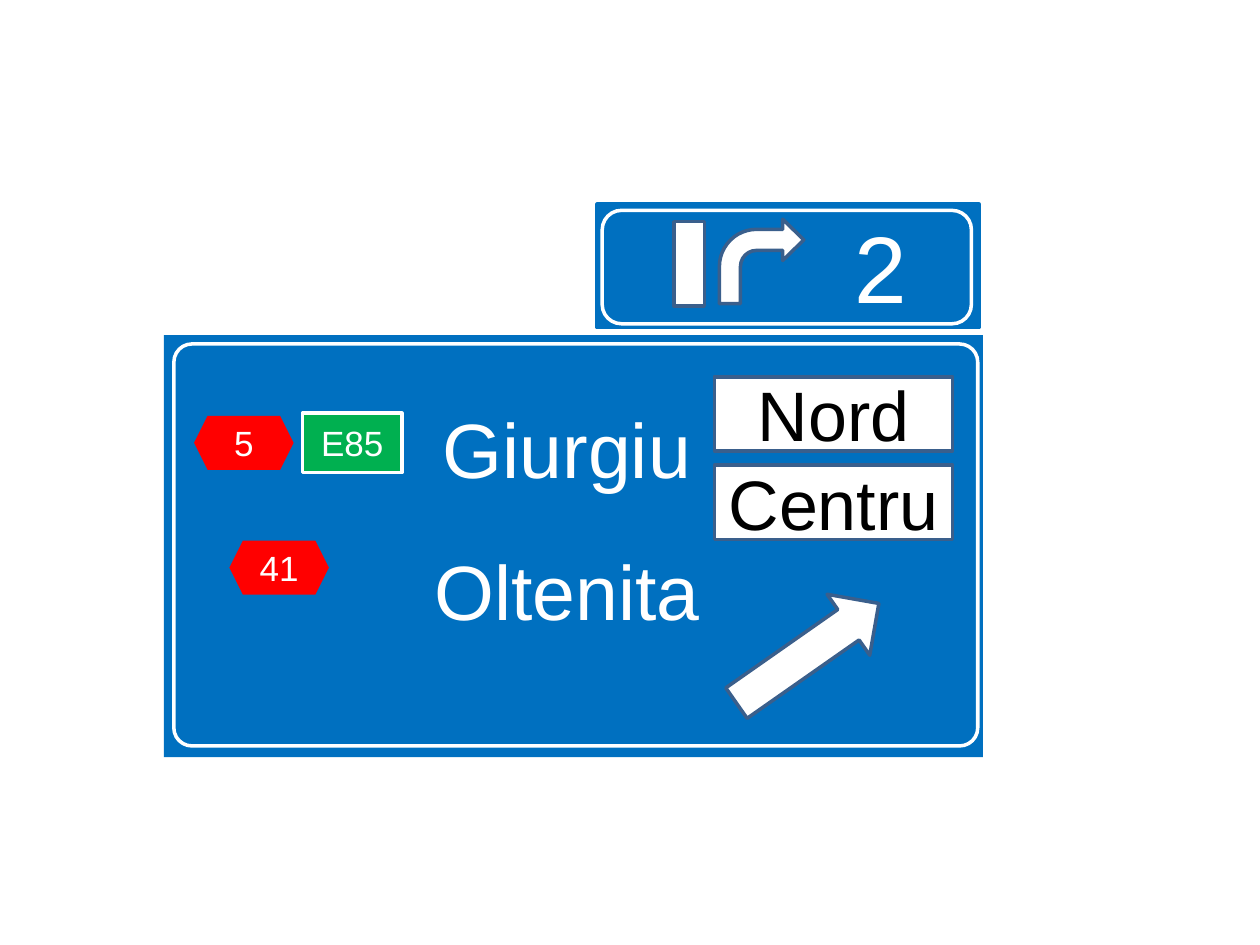
from pptx import Presentation
from pptx.dml.color import RGBColor
from pptx.enum.shapes import MSO_SHAPE
from pptx.enum.text import MSO_ANCHOR, MSO_AUTO_SIZE, PP_ALIGN
from pptx.util import Inches, Pt

THEME = {
    "font": "Arial",
    "blue": "0070C0", "white": "FFFFFF", "black": "000000",
    "red": "FF0000", "green": "00B050", "outline": "3A5F8C",
    "town": 44, "district": 40, "road": 20, "exit": 54,
    "line": 2,
}

TOWNS = ["Giurgiu", "Oltenita"]
MAIN_PANEL = (1.3, 2.66, 6.5, 3.35)
EXIT_PANEL = (4.74, 1.62, 3.03, 0.98)
EXIT_NUMBER = "2"

# label, left, top
DISTRICTS = [("Nord", 5.67, 2.99), ("Centru", 5.67, 3.69)]
DISTRICT_SIZE = (1.89, 0.59)
NATIONAL_ROADS = [("5", 1.54, 3.3), ("41", 1.82, 4.29)]
NATIONAL_ROAD_SIZE = (0.79, 0.43)
EUROPEAN_ROAD = ("E85", (2.4, 3.28, 0.79, 0.47))

# kind, box, adjustments, rotation
ARROWS = [
    (MSO_SHAPE.RIGHT_ARROW, (5.72, 4.89, 1.38, 0.59), (), 325),
    (MSO_SHAPE.RECTANGLE, (5.35, 1.76, 0.24, 0.67), (), 0),
    (MSO_SHAPE.BENT_ARROW, (5.71, 1.74, 0.67, 0.67), (0.25, 0.245, 0.25, 0.44), 0),
]
# box, corner radius
BORDERS = [((1.38, 2.73, 6.38, 3.19), 0.045), ((4.78, 1.67, 2.93, 0.9), 0.17)]


def color(name):
    return RGBColor.from_string(THEME[name])


def format_paragraph(paragraph, size, text_color):
    paragraph.alignment = PP_ALIGN.CENTER
    for run in paragraph.runs:
        run.font.name = THEME["font"]
        run.font.size = Pt(THEME[size])
        run.font.color.rgb = color(text_color)


def add_part(slide, kind, box, fill, line, adjustments=()):
    shape = slide.shapes.add_shape(kind, *map(Inches, box))
    shape.shadow.inherit = False
    for index, value in enumerate(adjustments):
        shape.adjustments[index] = value
    if fill:
        shape.fill.solid()
        shape.fill.fore_color.rgb = color(fill)
    else:
        shape.fill.background()
    shape.line.color.rgb = color(line)
    shape.line.width = Pt(THEME["line"])
    return shape


def add_label(shape, text, size, text_color):
    frame = shape.text_frame
    frame.text = text
    frame.vertical_anchor = MSO_ANCHOR.MIDDLE
    format_paragraph(frame.paragraphs[0], size, text_color)


def fill_main_panel(panel):
    panel.left, panel.top, panel.width, panel.height = map(Inches, MAIN_PANEL)
    panel.fill.solid()
    panel.fill.fore_color.rgb = color("blue")
    frame = panel.text_frame
    frame.text = "\n".join(TOWNS)
    frame.auto_size = MSO_AUTO_SIZE.NONE
    frame.vertical_anchor = MSO_ANCHOR.TOP
    frame.margin_left, frame.margin_top = 0, Inches(0.53)
    for index, paragraph in enumerate(frame.paragraphs):
        paragraph.space_before = Pt(28 if index else 0)
        format_paragraph(paragraph, "town", "white")


def main():
    presentation = Presentation()
    presentation.slide_width, presentation.slide_height = Inches(10), Inches(7.5)
    slide = presentation.slides.add_slide(presentation.slide_layouts[0])
    title = slide.shapes.title
    title.element.getparent().remove(title.element)
    fill_main_panel(slide.placeholders[1])

    for text, left, top in DISTRICTS:
        plate = add_part(slide, MSO_SHAPE.RECTANGLE, (left, top, *DISTRICT_SIZE), "white", "outline")
        add_label(plate, text, "district", "black")
    for text, left, top in NATIONAL_ROADS:
        badge = add_part(slide, MSO_SHAPE.HEXAGON, (left, top, *NATIONAL_ROAD_SIZE), "red", "red")
        badge.line.fill.background()
        add_label(badge, text, "road", "white")
    text, box = EUROPEAN_ROAD
    add_label(add_part(slide, MSO_SHAPE.RECTANGLE, box, "green", "white"), text, "road", "white")

    exit_panel = add_part(slide, MSO_SHAPE.ROUNDED_RECTANGLE, EXIT_PANEL, "blue", "blue", (0,))
    exit_panel.text_frame.margin_left = Inches(1.57)
    add_label(exit_panel, EXIT_NUMBER, "exit", "white")

    for kind, box, adjustments, rotation in ARROWS:
        add_part(slide, kind, box, "white", "outline", adjustments).rotation = rotation
    for box, radius in BORDERS:
        add_part(slide, MSO_SHAPE.ROUNDED_RECTANGLE, box, None, "white", (radius,))

    presentation.save("out.pptx")


if __name__ == "__main__":
    main()
